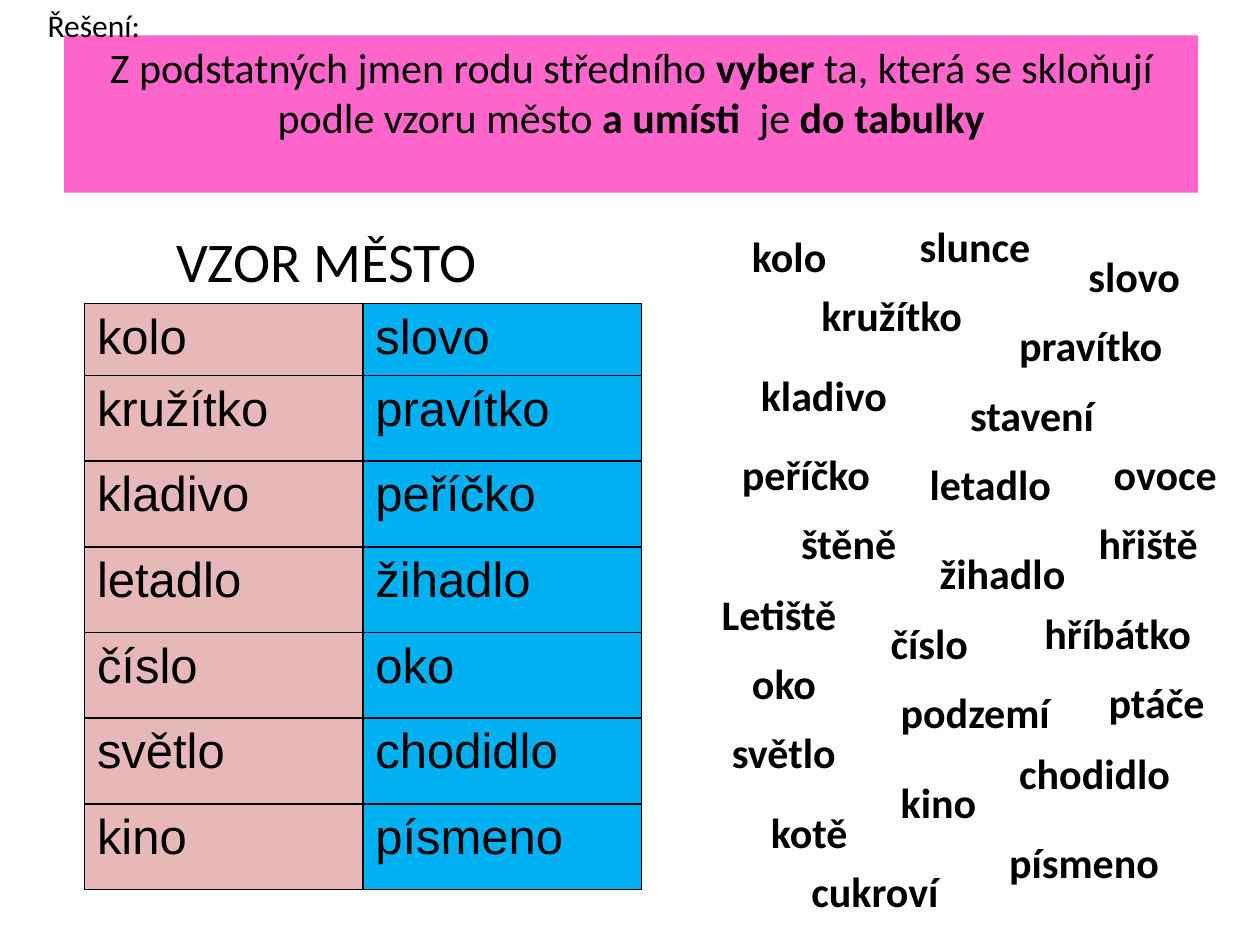
from lxml.etree import SubElement
from pptx import Presentation
from pptx.dml.color import RGBColor
from pptx.enum.shapes import MSO_SHAPE as SHAPE
from pptx.enum.text import MSO_ANCHOR as ANCHOR, PP_ALIGN as ALIGN
from pptx.oxml.ns import qn
from pptx.util import Inches, Pt

BLACK = RGBColor(0x00, 0x00, 0x00)
PINK = RGBColor(0xFF, 0x66, 0xCC)
ROSE = RGBColor(0xE6, 0xB9, 0xB8)
BLUE = RGBColor(0x00, 0xB0, 0xF0)


def style(r, size, font="Calibri", bold=False):
    r.font.size = Pt(size)
    r.font.name = font
    r.font.bold = bold
    r.font.color.rgb = BLACK


def add_text(text, left, top, width, height, size, bold=False):
    tf = s.shapes.add_textbox(Inches(left), Inches(top), Inches(width), Inches(height)).text_frame
    tf.word_wrap = True
    p = tf.paragraphs[0]
    p.text = text
    style(p.runs[0], size, bold=bold)
    return p


prs = Presentation()
prs.slide_width, prs.slide_height = Inches(10), Inches(7.5)
s = prs.slides.add_slide(prs.slide_layouts[6])

# Task banner
sp = s.shapes.add_shape(SHAPE.RECTANGLE, Inches(0.51), Inches(0.28), Inches(9), Inches(1.25))
sp.shadow.inherit = False
sp.fill.solid()
sp.fill.fore_color.rgb = PINK
sp.line.fill.background()
tf = sp.text_frame
tf.word_wrap = True
tf.vertical_anchor = ANCHOR.TOP
p = tf.paragraphs[0]
p.alignment = ALIGN.CENTER
for text, bold in [
    ("Z podstatných jmen rodu středního ", False),
    ("vyber", True),
    (" ta, která se skloňují podle vzoru město ", False),
    ("a umísti  ", True),
    ("je", False),
    (" do tabulky", True),
]:
    r = p.add_run()
    r.text = text
    style(r, 24, bold=bold)

# Table heading, indented within its box
p = add_text("VZOR MĚSTO", 0.5, 1.75, 9, 4.95, 32)
pPr = p._p.get_or_add_pPr()
pPr.set("marL", str(Inches(0.8)))
pPr.set("indent", "0")

# Table of the selected nouns
rows = [
    ("kolo", "slovo"),
    ("kružítko", "pravítko"),
    ("kladivo", "peříčko"),
    ("letadlo", "žihadlo"),
    ("číslo", "oko"),
    ("světlo", "chodidlo"),
    ("kino", "písmeno"),
]
table = s.shapes.add_table(len(rows), 2, Inches(0.67), Inches(2.41),
                           Inches(4.42), Inches(4.67)).table
table.first_row = table.horz_banding = False
for i, row in enumerate(rows):
    table.rows[i].height = Inches(0.68 if i else 0.57)
    for j, (word, color) in enumerate(zip(row, (ROSE, BLUE))):
        cell = table.cell(i, j)
        cell.text = word
        style(cell.text_frame.paragraphs[0].runs[0], 28, "Arial")
        tcPr = cell._tc.get_or_add_tcPr()
        for side in ("a:lnL", "a:lnR", "a:lnT", "a:lnB"):
            ln = SubElement(tcPr, qn(side), w=str(Pt(1)))
            SubElement(SubElement(ln, qn("a:solidFill")), qn("a:srgbClr"), val=str(BLACK))
        cell.fill.solid()
        cell.fill.fore_color.rgb = color

# Scattered nouns: word, left, top, width
for word, left, top, width in [
    ("kolo", 5.87, 1.78, 0.94),
    ("slovo", 8.54, 1.94, 1.18),
    ("kladivo", 5.94, 2.88, 1.49),
    ("peříčko", 5.79, 3.51, 1.57),
    ("letadlo", 7.28, 3.59, 1.34),
    ("pravítko", 7.99, 2.49, 1.65),
    ("kružítko", 6.42, 2.25, 1.57),
    ("ovoce", 8.74, 3.51, 1.26),
    ("slunce", 7.2, 1.7, 1.73),
    ("štěně", 6.26, 4.06, 1.18),
    ("stavení", 7.6, 3.04, 1.65),
    ("žihadlo", 7.36, 4.3, 1.42),
    ("Letiště", 5.63, 4.62, 1.57),
    ("hřiště", 8.62, 4.06, 1.18),
    ("hříbátko", 8.19, 4.77, 1.81),
    ("ptáče", 8.7, 5.32, 1.1),
    ("číslo", 6.97, 4.85, 1.1),
    ("oko", 5.87, 5.17, 0.87),
    ("podzemí", 7.05, 5.4, 1.57),
    ("světlo", 5.71, 5.72, 1.34),
    ("kino", 7.05, 6.11, 1.02),
    ("chodidlo", 7.99, 5.88, 1.73),
    ("písmeno", 7.91, 6.59, 1.81),
    ("cukroví", 6.34, 6.82, 1.49),
    ("kotě", 6.02, 6.35, 1.02),
]:
    add_text(word, left, top, width, 0.5, 24, bold=True)

# Solution label
add_text("Řešení:", 0.28, 0, 1.26, 0.4, 18)

prs.save("out.pptx")
